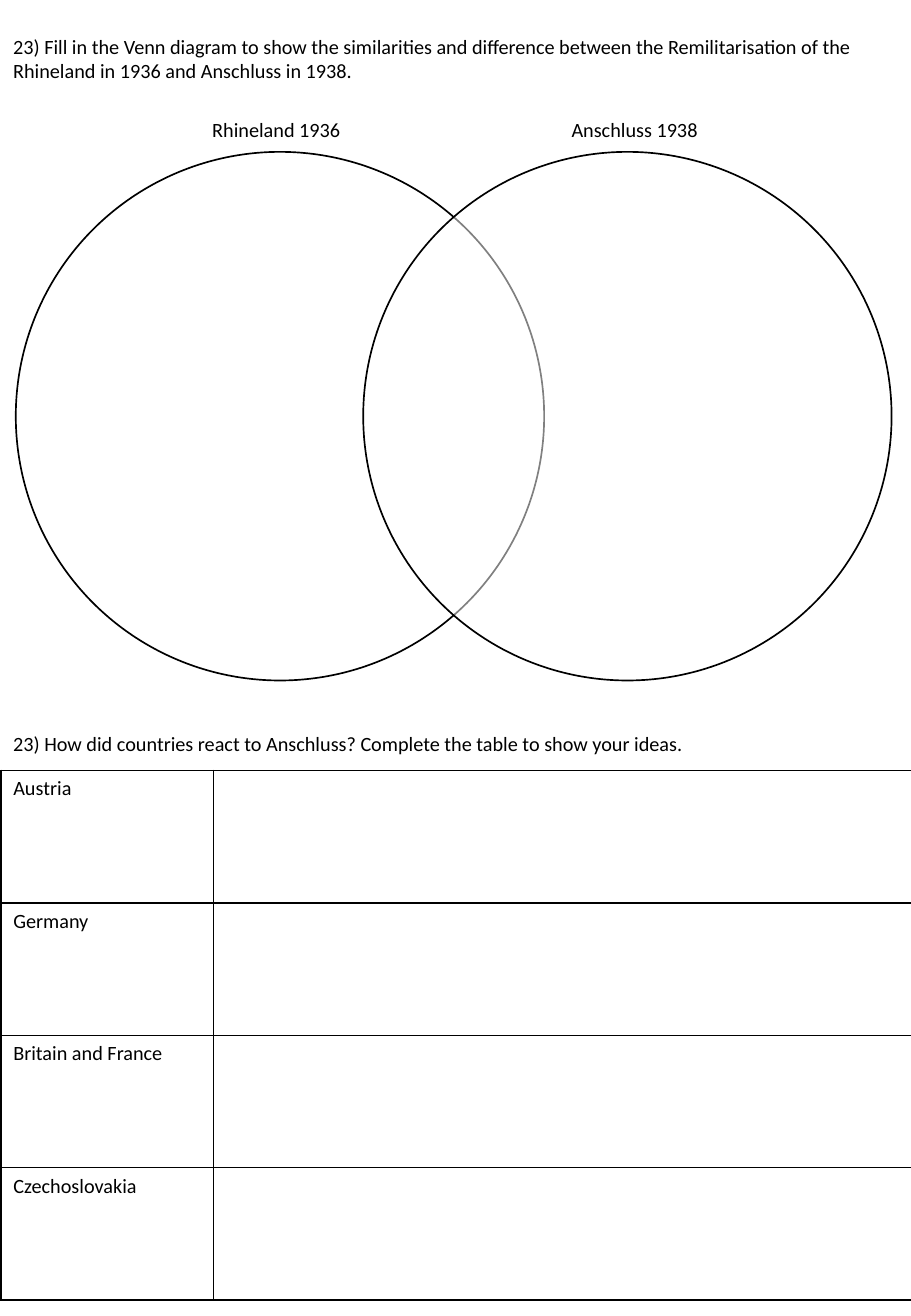
from dataclasses import dataclass

from lxml.etree import SubElement
from pptx import Presentation
from pptx.dml.color import RGBColor
from pptx.enum.shapes import MSO_SHAPE
from pptx.enum.text import MSO_AUTO_SIZE, PP_ALIGN
from pptx.oxml.ns import qn
from pptx.shapes.group import GroupShape
from pptx.slide import Slide
from pptx.table import _Cell
from pptx.text.text import _Paragraph
from pptx.util import Inches, Pt

BLACK = "000000"
WHITE = "FFFFFF"
PAGE_WIDTH = 7.5
MARGIN = 0.01
CIRCLE_TOP = 1.25
CIRCLE_SIZE = 4.35
LABEL_WIDTH = 1.97
ROW_HEIGHT = 1.09
COLUMN_WIDTHS = (1.75, 5.75)
COUNTRIES = ("Austria", "Germany", "Britain and France", "Czechoslovakia")


@dataclass
class TextBlock:
    text: str
    left: float
    top: float
    width: float
    height: float
    alignment: PP_ALIGN = PP_ALIGN.LEFT


TEXT_BLOCKS = (
    TextBlock("23) Fill in the Venn diagram to show the similarities and difference between "
              "the Remilitarisation of the Rhineland in 1936 and Anschluss in 1938.",
              MARGIN, 0.23, PAGE_WIDTH, 0.5),
    TextBlock("Rhineland 1936", 1.29, 0.92, LABEL_WIDTH, 0.3, PP_ALIGN.CENTER),
    TextBlock("Anschluss 1938", 4.24, 0.92, LABEL_WIDTH, 0.3, PP_ALIGN.CENTER),
    TextBlock("23) How did countries react to Anschluss? Complete the table to show your ideas.",
              MARGIN, 5.97, PAGE_WIDTH, 0.3),
)
CIRCLE_LEFTS = (0.13, 2.99)


def color(hex_value: str) -> RGBColor:
    return RGBColor.from_string(hex_value)


def format_paragraph(paragraph: _Paragraph) -> None:
    paragraph.font.name = "Calibri"
    paragraph.font.size = Pt(12)
    paragraph.font.color.rgb = color(BLACK)


def add_text(slide: Slide, block: TextBlock) -> None:
    box = slide.shapes.add_textbox(Inches(block.left), Inches(block.top),
                                   Inches(block.width), Inches(block.height))
    frame = box.text_frame
    frame.word_wrap = True
    frame.auto_size = MSO_AUTO_SIZE.SHAPE_TO_FIT_TEXT
    paragraph = frame.paragraphs[0]
    paragraph.text = block.text
    paragraph.alignment = block.alignment
    format_paragraph(paragraph)


def add_circle(group: GroupShape, left: float) -> None:
    """Add a half-transparent white circle with a black outline."""
    circle = group.shapes.add_shape(MSO_SHAPE.OVAL, Inches(left), Inches(CIRCLE_TOP),
                                    Inches(CIRCLE_SIZE), Inches(CIRCLE_SIZE))
    circle.shadow.inherit = False
    circle.fill.solid()
    circle.fill.fore_color.rgb = color(WHITE)
    fill_color = circle.fill._xPr.find(qn("a:solidFill"))[0]
    SubElement(fill_color, qn("a:alpha"), val="50000")
    circle.line.color.rgb = color(BLACK)
    circle.line.width = Pt(1)


def format_cell(cell: _Cell) -> None:
    """Give a cell black borders, a white fill and black text."""
    properties = cell._tc.get_or_add_tcPr()
    for side in ("L", "R", "T", "B"):
        border = SubElement(properties, qn(f"a:ln{side}"), w=str(Pt(1)))
        fill = SubElement(border, qn("a:solidFill"))
        SubElement(fill, qn("a:srgbClr"), val=BLACK)
    cell.fill.solid()
    cell.fill.fore_color.rgb = color(WHITE)
    format_paragraph(cell.text_frame.paragraphs[0])


def add_reaction_table(slide: Slide) -> None:
    table = slide.shapes.add_table(
        len(COUNTRIES), len(COLUMN_WIDTHS), Inches(MARGIN), Inches(6.34),
        Inches(PAGE_WIDTH), Inches(ROW_HEIGHT * len(COUNTRIES))).table
    table.first_row = False
    table.horz_banding = False
    for column, width in zip(table.columns, COLUMN_WIDTHS):
        column.width = Inches(width)
    for row, country in zip(table.rows, COUNTRIES):
        row.height = Inches(ROW_HEIGHT)
        row.cells[0].text = country
    for cell in table.iter_cells():
        format_cell(cell)


def main() -> None:
    presentation = Presentation()
    presentation.slide_width = Inches(PAGE_WIDTH)
    presentation.slide_height = Inches(10.83)
    slide = presentation.slides.add_slide(presentation.slide_layouts.get_by_name("Blank"))
    venn_diagram = slide.shapes.add_group_shape()
    for left in CIRCLE_LEFTS:
        add_circle(venn_diagram, left)
    for block in TEXT_BLOCKS:
        add_text(slide, block)
    add_reaction_table(slide)
    presentation.save("out.pptx")


if __name__ == "__main__":
    main()
